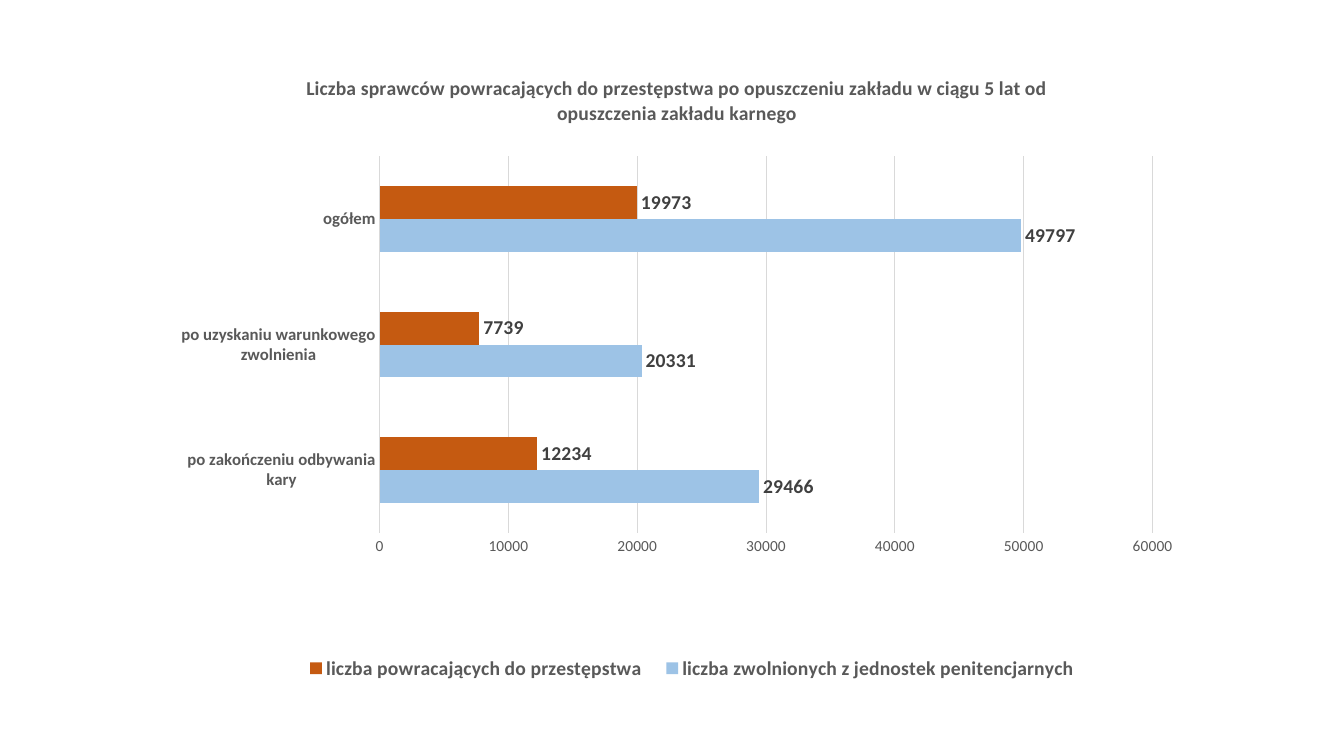
from dataclasses import dataclass

from lxml import etree
from pptx import Presentation
from pptx.chart.data import CategoryChartData
from pptx.dml.color import RGBColor
from pptx.enum.chart import XL_CHART_TYPE, XL_LABEL_POSITION, XL_LEGEND_POSITION, XL_TICK_MARK
from pptx.oxml.ns import qn
from pptx.util import Pt

BAR_CLUSTERED = XL_CHART_TYPE.BAR_CLUSTERED
OUTSIDE_END = XL_LABEL_POSITION.OUTSIDE_END
BOTTOM = XL_LEGEND_POSITION.BOTTOM
NO_TICK = XL_TICK_MARK.NONE

FONT = "Calibri"
COLORS = {
    "text": "595959",
    "label": "404040",
    "grid": "D9D9D9",
    "released": "9DC3E6",
    "returning": "C55A11",
}
TITLE = (
    "Liczba sprawców powracających do przestępstwa po opuszczeniu zakładu "
    "w ciągu 5 lat od opuszczenia zakładu karnego"
)
CATEGORIES = (
    "po zakończeniu odbywania kary",
    "po uzyskaniu warunkowego zwolnienia",
    "ogółem",
)


@dataclass(frozen=True)
class BarSeries:
    name: str
    values: tuple[int, ...]
    color: str


SERIES = (
    BarSeries("liczba zwolnionych z jednostek penitencjarnych", (29466, 20331, 49797), "released"),
    BarSeries("liczba powracających do przestępstwa", (12234, 7739, 19973), "returning"),
)


def rgb(name: str) -> RGBColor:
    return RGBColor.from_string(COLORS[name])


def set_font(font, size: float, color: str = "text", bold: bool = False) -> None:
    font.name = FONT
    font.size = Pt(size)
    font.bold = bold
    font.color.rgb = rgb(color)


def add_text(tf, text: str, **fmt) -> None:
    r = tf.paragraphs[0].add_run()
    r.text = text
    set_font(r.font, **fmt)


def set_line(line, color: str) -> None:
    line.color.rgb = rgb(color)
    line.width = Pt(0.75)


def set_layout(parent, after: str | None, inner: bool = False, **fractions: float) -> None:
    for old in parent.findall(qn("c:layout")):
        parent.remove(old)
    layout = etree.Element(qn("c:layout"))
    manual = etree.SubElement(layout, qn("c:manualLayout"))
    if inner:
        etree.SubElement(manual, qn("c:layoutTarget")).set("val", "inner")
    for axis in ("x", "y"):
        etree.SubElement(manual, qn(f"c:{axis}Mode")).set("val", "edge")
    for key, value in fractions.items():
        etree.SubElement(manual, qn(f"c:{key}")).set("val", str(value))
    if after is None:
        parent.insert(0, layout)
    else:
        parent.find(qn(after)).addnext(layout)


def format_series(plot) -> None:
    for s, entry in zip(plot.series, SERIES):
        s.format.fill.solid()
        s.format.fill.fore_color.rgb = rgb(entry.color)
        s.invert_if_negative = False
        labels = s.data_labels
        labels.show_value = True
        labels.position = OUTSIDE_END
        set_font(labels.font, 14, "label", True)


def format_axes(chart) -> None:
    cat, val = chart.category_axis, chart.value_axis
    for axis in (cat, val):
        axis.major_tick_mark = NO_TICK
        axis.minor_tick_mark = NO_TICK
    set_font(cat.tick_labels.font, 12, bold=True)
    set_line(cat.format.line, "grid")
    set_font(val.tick_labels.font, 11)
    val.format.line.fill.background()
    val.minimum_scale, val.maximum_scale, val.major_unit = 0, 60000, 10000
    val.has_major_gridlines = True
    set_line(val.major_gridlines.format.line, "grid")


def place_chart_areas(chart) -> None:
    area = chart.element.find(qn("c:chart"))
    set_layout(area.find(qn("c:title")), "c:tx", x=0.14, y=0.04)
    set_layout(area.find(qn("c:legend")), "c:legendPos", x=0.13, y=0.9, w=0.78, h=0.07)
    set_layout(area.find(qn("c:plotArea")), None, True, x=0.215, y=0.168, w=0.754, h=0.564)


def add_bar_chart(slide) -> None:
    data = CategoryChartData(number_format="General")
    data.categories = CATEGORIES
    for entry in SERIES:
        data.add_series(entry.name, entry.values)
    chart = slide.shapes.add_chart(
        BAR_CLUSTERED, Pt(113.76), Pt(31.68), Pt(732.24), Pt(476.64), data
    ).chart
    set_font(chart.font, 10)
    chart.has_title = True
    add_text(chart.chart_title.text_frame, TITLE, size=14, bold=True)
    chart.has_legend = True
    chart.legend.position = BOTTOM
    chart.legend.include_in_layout = False
    set_font(chart.legend.font, 14, bold=True)
    plot = chart.plots[0]
    plot.gap_width = 182
    plot.overlap = 0
    plot.vary_by_categories = False
    format_series(plot)
    format_axes(chart)
    place_chart_areas(chart)


def main() -> None:
    prs = Presentation()
    prs.slide_width, prs.slide_height = Pt(960), Pt(540)
    add_bar_chart(prs.slides.add_slide(prs.slide_layouts[6]))
    prs.save("out.pptx")


if __name__ == "__main__":
    main()
